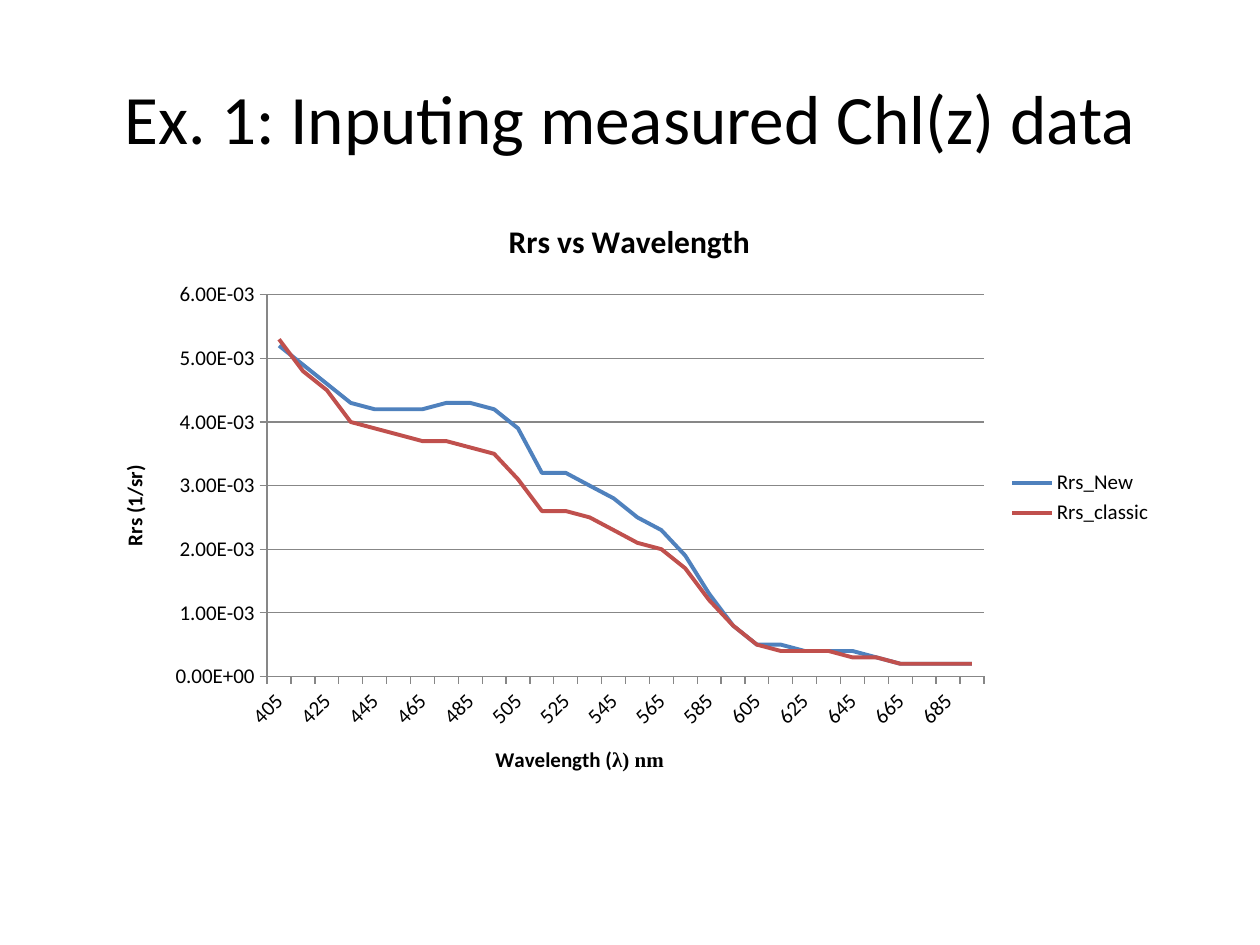
from lxml.etree import SubElement
from pptx import Presentation
from pptx.chart.data import CategoryChartData as ChartData
from pptx.dml.color import RGBColor
from pptx.enum.chart import XL_CHART_TYPE as Kind, XL_LEGEND_POSITION as Side
from pptx.enum.chart import XL_TICK_MARK as Tick
from pptx.enum.text import MSO_ANCHOR as Anchor, PP_ALIGN as Align
from pptx.oxml.ns import qn
from pptx.util import Inches, Pt

FONT, BLACK, GRAY = "Calibri", "000000", "878787"
SERIES = [
    ("Rrs_New", "4F81BD",
     [0.0052, 0.0049, 0.0046, 0.0043, 0.0042, 0.0042, 0.0042, 0.0043,
      0.0043, 0.0042, 0.0039, 0.0032, 0.0032, 0.003, 0.0028, 0.0025,
      0.0023, 0.0019, 0.0013, 0.0008, 0.0005, 0.0005, 0.0004, 0.0004,
      0.0004, 0.0003, 0.0002, 0.0002, 0.0002, 0.0002]),
    ("Rrs_classic", "C0504D",
     [0.0053, 0.0048, 0.0045, 0.004, 0.0039, 0.0038, 0.0037, 0.0037,
      0.0036, 0.0035, 0.0031, 0.0026, 0.0026, 0.0025, 0.0023, 0.0021,
      0.002, 0.0017, 0.0012, 0.0008, 0.0005, 0.0004, 0.0004, 0.0004,
      0.0003, 0.0003, 0.0002, 0.0002, 0.0002, 0.0002]),
]


def color(code):
    return RGBColor.from_string(code)


def style(font, size, bold=False, name=FONT):
    font.name, font.size, font.bold = name, Pt(size), bold
    font.color.rgb = color(BLACK)


def stroke(line, code, width):
    line.color.rgb = color(code)
    line.width = Pt(width)


def add_title(slide, text, box):
    title = slide.shapes.title
    title.left, title.top, title.width, title.height = map(Inches, box)
    frame = title.text_frame
    frame.text = text
    frame.vertical_anchor = Anchor.MIDDLE
    para = frame.paragraphs[0]
    para.alignment = Align.CENTER
    style(para.runs[0].font, 39.6)


def set_title(owner, size, *parts):
    """Give a chart or axis a bold title made of (text, font) parts."""
    para = owner.text_frame.paragraphs[0]
    for text, name in parts:
        run = para.add_run()
        run.text = text
        style(run.font, size, True, name)


def format_axis(axis, *parts):
    set_title(axis.axis_title, 12, *parts)
    style(axis.tick_labels.font, 12)
    axis.major_tick_mark, axis.minor_tick_mark = Tick.OUTSIDE, Tick.NONE
    stroke(axis.format.line, GRAY, 0.75)


def place_plot(chart, box, inner):
    """Fix the plot area; inner is in inches from the corner of box."""
    area = chart._chartSpace.chart.plotArea
    layout = area.find(qn("c:layout"))
    if layout is None:
        layout = SubElement(area, qn("c:layout"))
        area.insert(0, layout)
    manual = SubElement(layout, qn("c:manualLayout"))
    shares = [part / whole for part, whole in zip(inner, box[2:] * 2)]
    for tag, val in [("layoutTarget", "inner"), ("xMode", "edge"),
                     ("yMode", "edge"), *zip("xywh", shares)]:
        SubElement(manual, qn(f"c:{tag}")).set("val", str(val))


def skip_labels(axis, step):
    skip = axis._element.makeelement(qn("c:tickLblSkip"), {"val": str(step)})
    axis._element.find(qn("c:noMultiLvlLbl")).addprevious(skip)


def add_graph(slide, box):
    data = ChartData(number_format="0.00E+00")
    data.categories = [str(n) for n in range(405, 696, 10)]
    for name, _, vals in SERIES:
        data.add_series(name, vals)
    chart = slide.shapes.add_chart(Kind.LINE, *map(Inches, box), data).chart
    style(chart.font, 10)
    chart.has_title = True
    set_title(chart.chart_title, 18, ("Rrs vs Wavelength", FONT))
    place_plot(chart, box, (1.38, 0.79, 5.69, 3.03))

    waves, values = chart.category_axis, chart.value_axis
    format_axis(waves, ("Wavelength (", FONT), ("λ) nm", "Times New Roman"))
    waves.tick_labels._element.txPr.bodyPr.set("rot", "-2700000")
    skip_labels(waves, 2)
    format_axis(values, ("Rrs (1/sr)", FONT))
    values.minimum_scale, values.maximum_scale = 0, 0.006
    values.major_unit = 0.001
    values.tick_labels.number_format = "0.00E+00"
    values.tick_labels.number_format_is_linked = False
    stroke(values.major_gridlines.format.line, GRAY, 0.75)

    chart.has_legend = True
    chart.legend.position = Side.RIGHT
    chart.legend.include_in_layout = False
    style(chart.legend.font, 12)
    plot = chart.plots[0]
    plot.vary_by_categories = False
    for line, (_, code, _) in zip(plot.series, SERIES):
        line.smooth = False
        stroke(line.format.line, code, 2.25)


def main():
    deck = Presentation()
    deck.slide_width, deck.slide_height = Inches(10), Inches(7.5)
    slide = deck.slides.add_slide(deck.slide_layouts[5])
    add_title(slide, "Ex. 1: Inputing measured Chl(z) data", (0.5, 0.3, 9, 1.25))
    add_graph(slide, (0.74, 1.55, 8.51, 4.8))
    deck.save("out.pptx")


if __name__ == "__main__":
    main()
